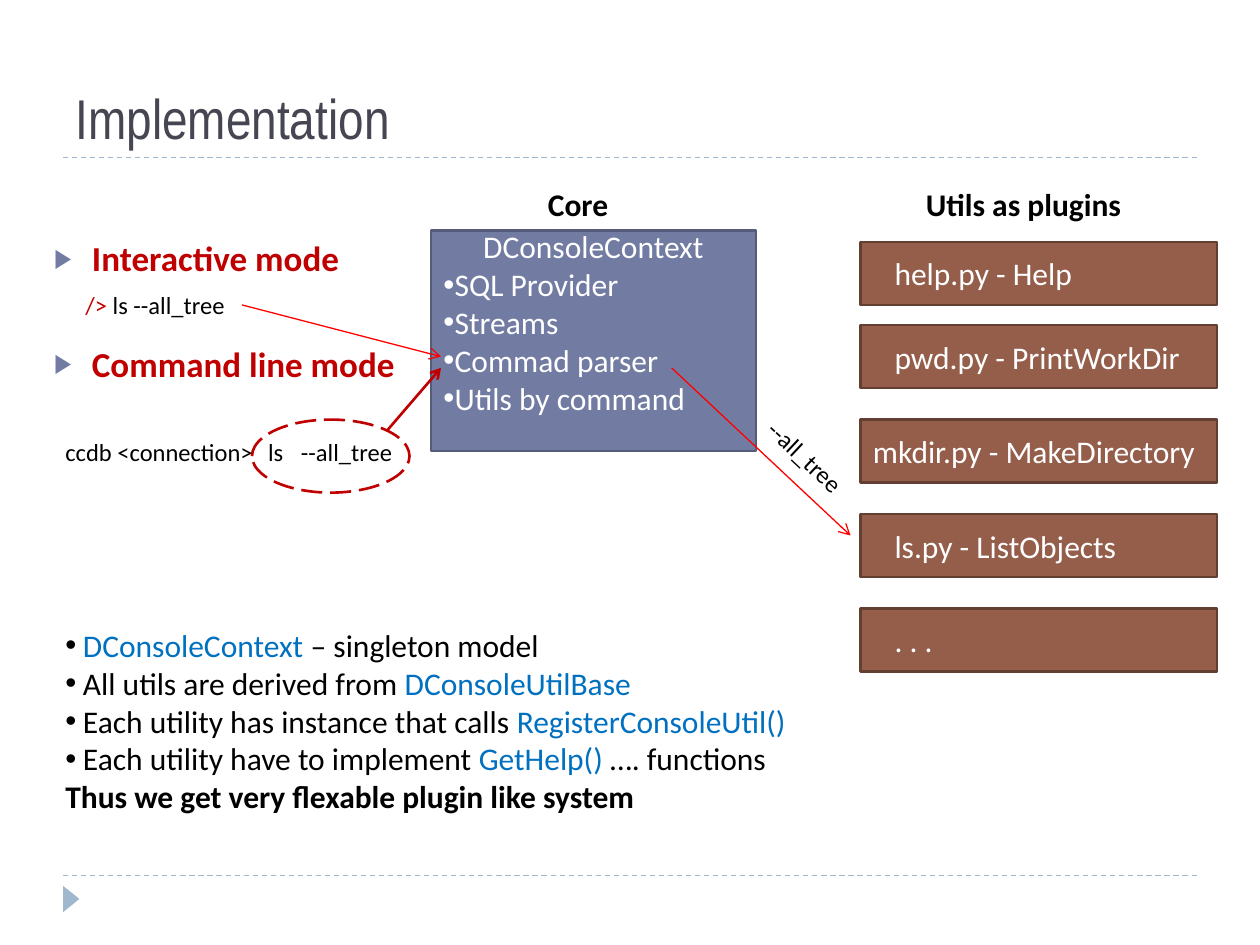
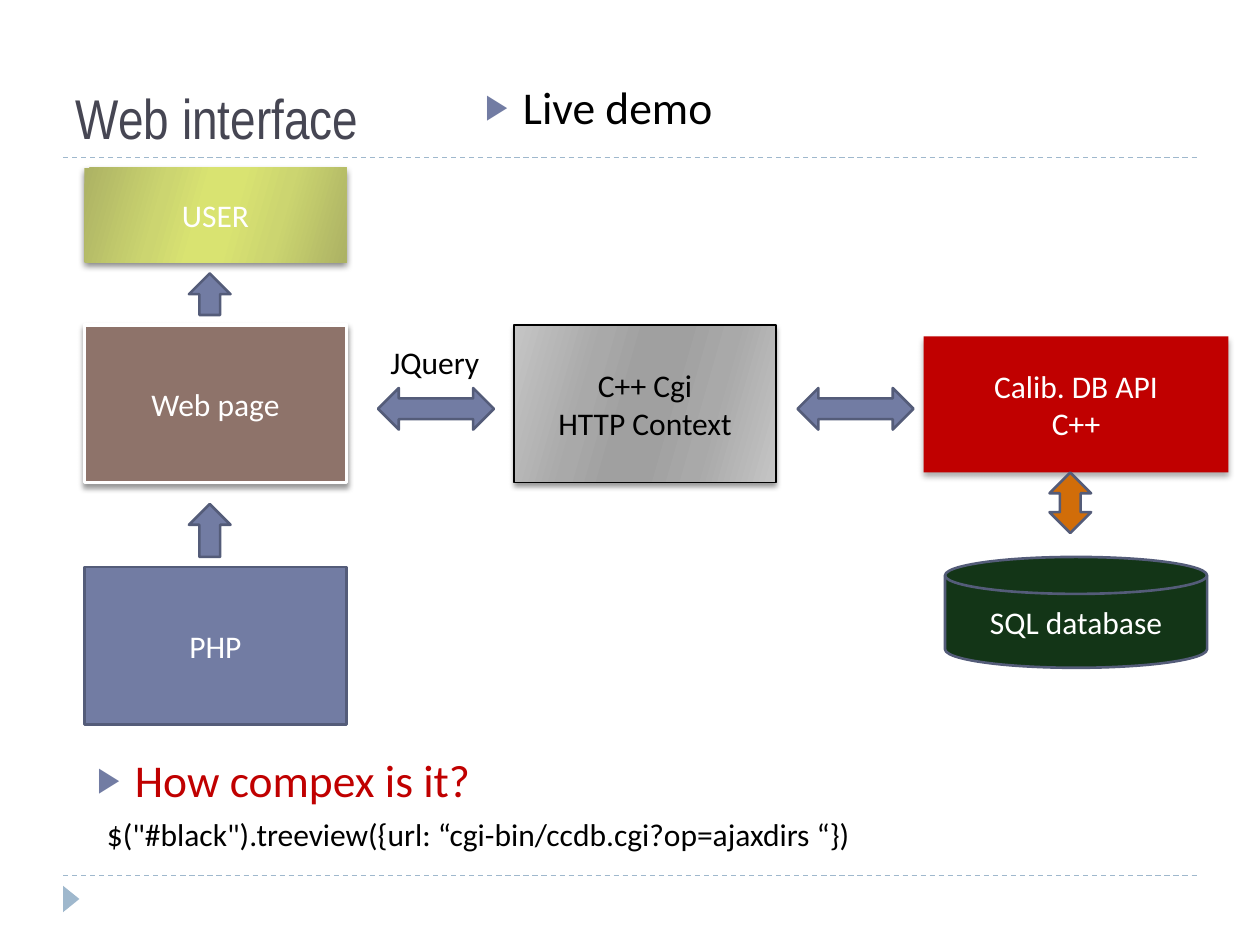
"""Build two slides on a console plugin system and its web interface."""
from dataclasses import dataclass

from lxml import etree
from pptx import Presentation, util as u
from pptx.dml.color import RGBColor
from pptx.enum import dml, shapes, text
from pptx.oxml.ns import qn


@dataclass(frozen=True)
class Theme:
    title_font: str = "Arial Narrow"
    body_font: str = "Calibri"
    title_size: int = 32
    demo_size: int = 26
    mode_size: int = 20
    text_size: int = 18
    code_size: int = 14
    ink: str = "464653"
    black: str = "000000"
    white: str = "FFFFFF"
    rule: str = "9FB8CD"
    slate: str = "727CA3"
    slate_edge: str = "545C79"
    brown: str = "955E4B"
    brown_edge: str = "633F32"
    taupe: str = "8E736A"
    red: str = "C00000"
    bright_red: str = "FF0000"
    blue: str = "0070C0"
    green: str = "133517"
    orange: str = "D16D09"
    grays: tuple = ("C5C5C5", "A9A9A9", "A0A0A0")
    limes: tuple = ("ACB264", "CCD570", "D9E371")


theme = Theme()
LEFT, CENTER = text.PP_ALIGN.LEFT, text.PP_ALIGN.CENTER
TOP, MIDDLE, BOTTOM = (text.MSO_ANCHOR.TOP, text.MSO_ANCHOR.MIDDLE,
                       text.MSO_ANCHOR.BOTTOM)
SHAPE = shapes.MSO_SHAPE


def write(box, lines, size=theme.text_size, color=theme.black, bold=False,
          align=LEFT, anchor=TOP, font=theme.body_font, bullet=None, hang=0,
          before=0):
    """Fill a box with paragraphs; a line is a string or (text, color) pairs."""
    frame = box.text_frame
    frame.word_wrap = True
    frame.auto_size = text.MSO_AUTO_SIZE.NONE
    frame.vertical_anchor = anchor
    for index, line in enumerate(lines):
        para = frame.add_paragraph() if index else frame.paragraphs[0]
        props = para._p.get_or_add_pPr()
        props.set("marL", str(u.Inches(hang)))
        props.set("indent", str(u.Inches(-hang)))
        if bullet:
            arrow = bullet == "▶"
            tint = etree.SubElement(props, qn("a:buClr"))
            etree.SubElement(tint, qn("a:srgbClr"), val=theme.slate if arrow else color)
            etree.SubElement(props, qn("a:buSzPct"), val="76000" if arrow else "100000")
            etree.SubElement(props, qn("a:buFont"), typeface="Arial")
            etree.SubElement(props, qn("a:buChar"), char=bullet)
        else:
            etree.SubElement(props, qn("a:buNone"))
        para.alignment = align
        para.space_before = u.Pt(before)
        para.font.name = font
        para.font.size = u.Pt(size)
        para.font.bold = bold
        para.font.color.rgb = RGBColor.from_string(color)
        for words, tone in [(line, color)] if isinstance(line, str) else line:
            span = para.add_run()
            span.text = words
            if tone != color:
                span.font.color.rgb = RGBColor.from_string(tone)


def draw(page, kind, at, fill=None, edge=None, width=1.5, shadow=None):
    """Add a shape; a tuple fill is a mirrored gradient, shadow is alpha, blur, distance."""
    shape = page.shapes.add_shape(kind, *map(u.Inches, at))
    shape.shadow.inherit = False
    if isinstance(fill, tuple):
        shape.fill.gradient()
        shape.fill.gradient_angle = 344
        stops = shape._element.spPr.find(".//" + qn("a:gsLst"))
        stops.clear()
        for place, tone in zip((0, 30, 45, 55, 73, 100), fill + fill[::-1]):
            stop = etree.SubElement(stops, qn("a:gs"), pos=str(place * 1000))
            etree.SubElement(stop, qn("a:srgbClr"), val=tone)
    elif fill:
        shape.fill.solid()
        shape.fill.fore_color.rgb = RGBColor.from_string(fill)
    else:
        shape.fill.background()
    if edge:
        shape.line.color.rgb = RGBColor.from_string(edge)
        shape.line.width = u.Pt(width)
    else:
        shape.line.fill.background()
    if shadow:
        alpha, blur, distance = shadow
        effects = shape._element.spPr.find(qn("a:effectLst"))
        outer = etree.SubElement(effects, qn("a:outerShdw"), blurRad=str(u.Pt(blur)),
                                 dist=str(u.Pt(distance)), dir="5400000", rotWithShape="0")
        tint = etree.SubElement(outer, qn("a:srgbClr"), val=theme.black)
        etree.SubElement(tint, qn("a:alpha"), val=str(alpha * 1000))
    return shape


deck = Presentation()
deck.slide_width, deck.slide_height = u.Inches(10), u.Inches(7.5)
layout = deck.slide_layouts[3]
console, web = pages = [deck.slides.add_slide(layout) for _ in range(2)]

for page, heading in zip(pages, ("Implementation", "Web interface")):
    title = page.shapes.title
    title.left, title.top, title.width, title.height = map(u.Inches, (0.5, 0.17, 9, 1.08))
    write(title, [heading], theme.title_size, theme.ink, anchor=BOTTOM,
          font=theme.title_font)

for page, number, words, at, size, color, bold in (
    (console, 1, "Interactive mode", (0.33, 1.83, 2.5, 0.42), theme.mode_size, theme.red, True),
    (console, 2, "Command line mode", (0.33, 2.67, 3, 0.5), theme.mode_size, theme.red, True),
    (web, 1, "Live demo", (3.75, 0.58, 6, 0.75), theme.demo_size, theme.black, False),
    (web, 2, "How compex is it?", (0.67, 5.92, 9, 0.75), theme.demo_size, theme.red, False),
):
    body = page.placeholders[number]
    body.left, body.top, body.width, body.height = map(u.Inches, at)
    write(body, [words], size, color, bold, bullet="▶", hang=0.3, before=6)

core = draw(console, SHAPE.RECTANGLE, (3.42, 1.83, 2.58, 1.75), theme.slate, theme.slate_edge)
core.text_frame.margin_top = 0
core.text_frame.margin_bottom = u.Inches(0.3)
write(core, ["DConsoleContext", "SQL Provider", "Streams", "Commad parser",
             "Utils by command"], color=theme.white, anchor=MIDDLE, bullet="•", hang=0.09)
heading = core.text_frame.paragraphs[0]
heading.alignment = CENTER
heading_props = heading._p.pPr
heading_props.set("marL", "0")
heading_props.set("indent", "0")
for tag in ("a:buClr", "a:buSzPct", "a:buFont"):
    heading_props.remove(heading_props.find(qn(tag)))
heading_props.replace(heading_props.find(qn("a:buChar")), etree.Element(qn("a:buNone")))

for top, words, inset in (
    (1.92, "help.py - Help", 0.27),
    (2.58, "pwd.py - PrintWorkDir", 0.27),
    (3.33, "mkdir.py - MakeDirectory", 0.1),
    (4.08, "ls.py - ListObjects", 0.27),
    (4.83, ". . .", 0.27),
):
    plugin = draw(console, SHAPE.RECTANGLE, (6.83, top, 2.83, 0.5),
                  theme.brown, theme.brown_edge)
    plugin.text_frame.margin_left = u.Inches(inset)
    write(plugin, [words], color=theme.white, anchor=MIDDLE)

argument_ring = draw(console, SHAPE.OVAL, (2, 3.33, 1.25, 0.58), edge=theme.red)
argument_ring.line.dash_style = dml.MSO_LINE.LONG_DASH

code = {"size": theme.code_size}
for page, at, turn, lines, style in (
    (console, (0.58, 2.25, 7, 0.96), 0,
     [[("/> ", theme.red), ("ls --all_tree", theme.black)]], code | {"before": 6}),
    (console, (0.42, 3.42, 1.75, 0.34), 0, ["ccdb <connection>"], code),
    (console, (2.03, 3.42, 0.4, 0.34), 0, ["ls"], code),
    (console, (2.29, 3.42, 1.1, 0.34), 0, ["--all_tree"], code),
    (console, (5.89, 3.55, 1.2, 0.34), 43.2, ["--all_tree"], code | {"before": 6}),
    (console, (4.25, 1.42, 0.74, 0.4), 0, ["Core"], {"bold": True}),
    (console, (7.25, 1.42, 1.82, 0.4), 0, ["Utils as plugins"], {"bold": True}),
    (console, (0.42, 4.92, 5.99, 1.6), 0, [
        [("DConsoleContext", theme.blue), (" – singleton model", theme.black)],
        [("All utils are derived from ", theme.black), ("DConsoleUtilBase", theme.blue)],
        [("Each utility has instance that calls ", theme.black),
         ("RegisterConsoleUtil()", theme.blue)],
        [("Each utility have to implement ", theme.black), ("GetHelp() ", theme.blue),
         ("…. functions", theme.black)],
    ], {"bullet": "•", "hang": 0.14}),
    (console, (0.42, 6.12, 5.99, 0.4), 0,
     ["Thus we get very flexable plugin like system"], {"bold": True}),
    (web, (3, 2.67, 0.95, 0.4), 0, ["JQuery"], {}),
    (web, (0.75, 6.42, 8.25, 0.4), 0,
     ['$("#black").treeview({url: “cgi-bin/ccdb.cgi?op=ajaxdirs “})'], {}),
):
    label = page.shapes.add_textbox(*map(u.Inches, at))
    label.rotation = turn
    write(label, lines, **style)

for kind, at, fill, edge, width, shadow, lines, color in (
    (SHAPE.RECTANGLE, (0.67, 1.33, 2.08, 0.75), theme.limes, None, 0, (50, 4, 2),
     ["USER"], theme.white),
    (SHAPE.RECTANGLE, (0.67, 2.58, 2.08, 1.25), theme.taupe, theme.white, 2, (40, 3, 2),
     ["Web page"], theme.white),
    (SHAPE.RECTANGLE, (0.67, 4.5, 2.08, 1.25), theme.slate, theme.slate_edge, 1.5, None,
     ["PHP"], theme.white),
    (SHAPE.RECTANGLE, (4.08, 2.58, 2.08, 1.25), theme.grays, theme.black, 0.75, (40, 3, 2),
     ["C++ Cgi", "HTTP Context"], theme.black),
    (SHAPE.RECTANGLE, (7.33, 2.67, 2.42, 1.08), theme.red, None, 0, (32, 3.5, 2.2),
     ["Calib. DB API", "C++"], theme.white),
    (SHAPE.FLOWCHART_MAGNETIC_DISK, (7.5, 4.42, 2.08, 0.88), theme.green,
     theme.slate_edge, 1.5, None, ["SQL database"], theme.white),
):
    stage = draw(web, kind, at, fill, edge, width, shadow)
    write(stage, lines, color=color, align=CENTER, anchor=MIDDLE)

for kind, at, fill in (
    (SHAPE.UP_ARROW, (1.5, 2.17, 0.33, 0.33), theme.slate),
    (SHAPE.UP_ARROW, (1.5, 4, 0.33, 0.42), theme.slate),
    (SHAPE.LEFT_RIGHT_ARROW, (3, 3.08, 0.92, 0.33), theme.slate),
    (SHAPE.LEFT_RIGHT_ARROW, (6.33, 3.08, 0.92, 0.33), theme.slate),
    (SHAPE.UP_DOWN_ARROW, (8.33, 3.75, 0.33, 0.48), theme.orange),
):
    draw(web, kind, at, fill, theme.slate_edge)

for ends, color, width, shared in (
    ((0.5, 6.95, 9.5, 6.95), theme.rule, 0.75, True),
    ((0.5, 1.25, 9.5, 1.25), theme.rule, 0.75, True),
    ((1.92, 2.42, 3.5, 2.83), theme.bright_red, 0.75, False),
    ((5.33, 2.92, 6.75, 4.25), theme.bright_red, 0.75, False),
    ((3.07, 3.42, 3.5, 2.92), theme.red, 1.5, False),
):
    line = console.shapes.add_connector(shapes.MSO_CONNECTOR.STRAIGHT, *map(u.Inches, ends))
    line.line.color.rgb = RGBColor.from_string(color)
    line.line.width = u.Pt(width)
    etree.SubElement(line._element.spPr, qn("a:effectLst"))
    if shared:
        line.line.dash_style = dml.MSO_LINE.DASH
        layout.shapes.element.append(line._element)
    else:
        etree.SubElement(line._element.spPr.find(qn("a:ln")), qn("a:tailEnd"), type="arrow")

corner = draw(console, SHAPE.ISOSCELES_TRIANGLE, (0.46, 7.07, 0.21, 0.13), theme.rule)
corner.rotation = 90
layout.shapes.element.append(corner._element)

deck.save("out.pptx")
